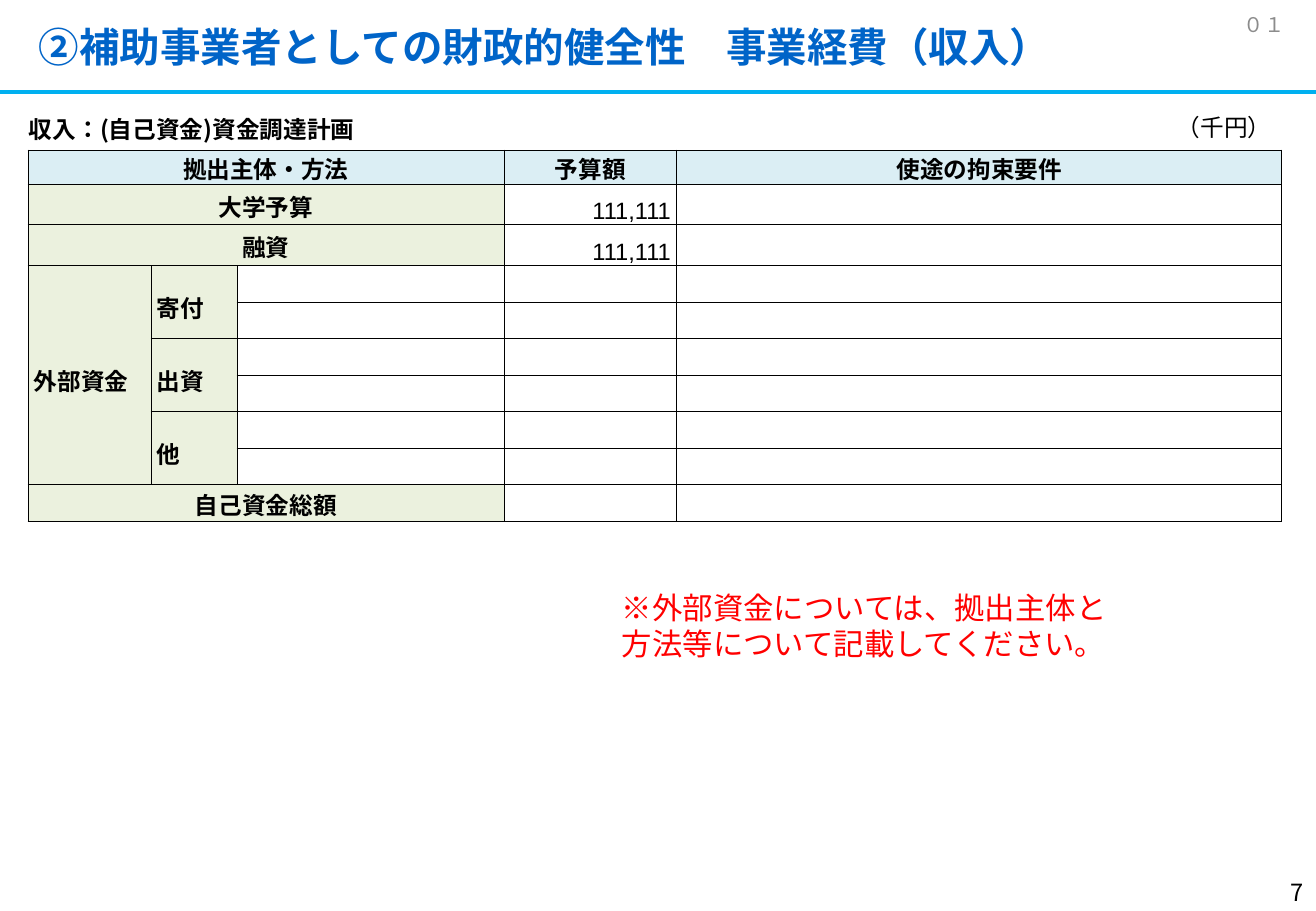
import pptx
import pptx.util
import pptx.dml.color
import pptx.enum.lang
import pptx.enum.shapes
import pptx.enum.text
import pptx.oxml

SCALE = 914400 / 121.5
ALIGN = pptx.enum.text.PP_ALIGN
MIDDLE = pptx.enum.text.MSO_ANCHOR.MIDDLE
SANS = "Noto Sans CJK JP"
BLUE, GREEN, WHITE, BLACK = "DBEEF4", "EBF1DE", "FFFFFF", "000000"


def px(num):
    return pptx.util.Emu(round(num * SCALE))


def color(code):
    return pptx.dml.color.RGBColor.from_string(code)


def apply(item, values):
    for name, value in values.items():
        setattr(item, name, value)


def write(frame, text, size, ink=BLACK, bold=False, font=SANS, **para):
    line = frame.paragraphs[0]
    apply(line, para)
    if not text:
        return
    run = line.add_run()
    run.text = text
    apply(run.font, {"name": font, "size": pptx.util.Pt(size), "bold": bold,
                     "language_id": pptx.enum.lang.MSO_LANGUAGE_ID.JAPANESE})
    run.font.color.rgb = color(ink)
    east = pptx.oxml.parse_xml(
        '<a:ea xmlns:a="http://schemas.openxmlformats.org/drawingml/2006/main"'
        f' typeface="{font}"/>')
    run.font._element.find(pptx.oxml.ns.qn("a:latin")).addnext(east)


def label(slide, box, text, size, anchor=None, **style):
    frame = slide.shapes.add_textbox(*map(px, box)).text_frame
    apply(frame, {"word_wrap": True, "vertical_anchor": anchor})
    write(frame, text, size, **style)


def rule(slide, left, right, top):
    line = slide.shapes.add_connector(
        pptx.enum.shapes.MSO_CONNECTOR.STRAIGHT, px(left), px(top), px(right), px(top))
    line.line.color.rgb = color("00B0F0")
    line.line.width = pptx.util.Pt(2.25)
    line._element.spPr.append(pptx.oxml.parse_xml(
        '<a:effectLst xmlns:a="http://schemas.openxmlformats.org/drawingml/2006/main"/>'))


def border(cell):
    for side in "LRTB":
        cell._tc.get_or_add_tcPr().append(pptx.oxml.parse_xml(
            f'<a:ln{side} xmlns:a="http://schemas.openxmlformats.org/drawingml/2006/main"'
            f' w="6350"><a:solidFill><a:srgbClr val="{BLACK}"/></a:solidFill></a:ln{side}>'))


def grid(slide, left, top, cols, rows, items):
    table = slide.shapes.add_table(
        len(rows), len(cols), px(left), px(top), px(sum(cols)), px(sum(rows))).table
    apply(table, {"first_row": False, "horz_banding": False})
    for col, width in zip(table.columns, cols):
        col.width = px(width)
    for row, height in zip(table.rows, rows):
        row.height = px(height)

    blank = ("", WHITE, ALIGN.LEFT, 20, False, 1, 1)
    for r in range(len(rows)):
        for c in range(len(cols)):
            text, fill, align, space, bold, down, across = items.get((r, c), blank)
            cell = table.cell(r, c)
            apply(cell, {"margin_left": px(6), "margin_right": px(6), "margin_top": 0,
                         "margin_bottom": 0, "vertical_anchor": MIDDLE})
            border(cell)
            cell.fill.solid()
            cell.fill.fore_color.rgb = color(fill)
            write(cell.text_frame, text, 14, bold=bold, font="Arial",
                  alignment=align, line_spacing=pptx.util.Pt(space))
            if down * across > 1:
                cell.merge(table.cell(r + down - 1, c + across - 1))


def budget():
    def head(text, fill, across=1):
        return text, fill, ALIGN.CENTER, 20, True, 1, across

    def group(text, down):
        return text, GREEN, ALIGN.JUSTIFY, 24, True, down, 1

    items = {(0, 0): head("拠出主体・方法", BLUE, 3),
             (0, 3): head("予算額", BLUE),
             (0, 4): head("使途の拘束要件", BLUE),
             (3, 0): group("外部資金", 6)}
    for row, text in {1: "大学予算", 2: "融資", 9: "自己資金総額"}.items():
        items[row, 0] = head(text, GREEN, 3)
    for row in (1, 2):
        items[row, 3] = ("111,111", WHITE, ALIGN.RIGHT, 24, False, 1, 1)
    for num, text in enumerate(("寄付", "出資", "他")):
        items[3 + 2 * num, 1] = group(text, 2)
    return items


def main():
    deck = pptx.Presentation()
    apply(deck, {"slide_width": px(1316), "slide_height": px(911)})
    slide = deck.slides.add_slide(deck.slide_layouts[6])

    # Title band
    label(slide, (27, 16, 1264, 61), "②補助事業者としての財政的健全性　事業経費（収入）", 24,
          MIDDLE, ink="0064C8", bold=True)
    rule(slide, 0, 1316, 92)

    # Income table
    grid(slide, 28, 150, [123, 86, 267, 173, 605],
         [34, 40, 41] + [34, 35] * 3 + [34], budget())
    label(slide, (17, 109, 452, 41), "収入：(自己資金)資金調達計画", 14, bold=True)
    label(slide, (1165, 107, 137, 41), "（千円）", 14)

    # Numbers in the corners
    label(slide, (1232, 0, 84, 49), "０１", 12, MIDDLE, ink="8C8C8C")
    label(slide, (1011, 873, 305, 38), "7", 14, MIDDLE, alignment=ALIGN.RIGHT)

    # Note in red
    label(slide, (610, 583, 516, 86),
          "※外部資金については、拠出主体と方法等について記載してください。", 18, ink="FF0000")

    deck.save("out.pptx")


if __name__ == "__main__":
    main()
